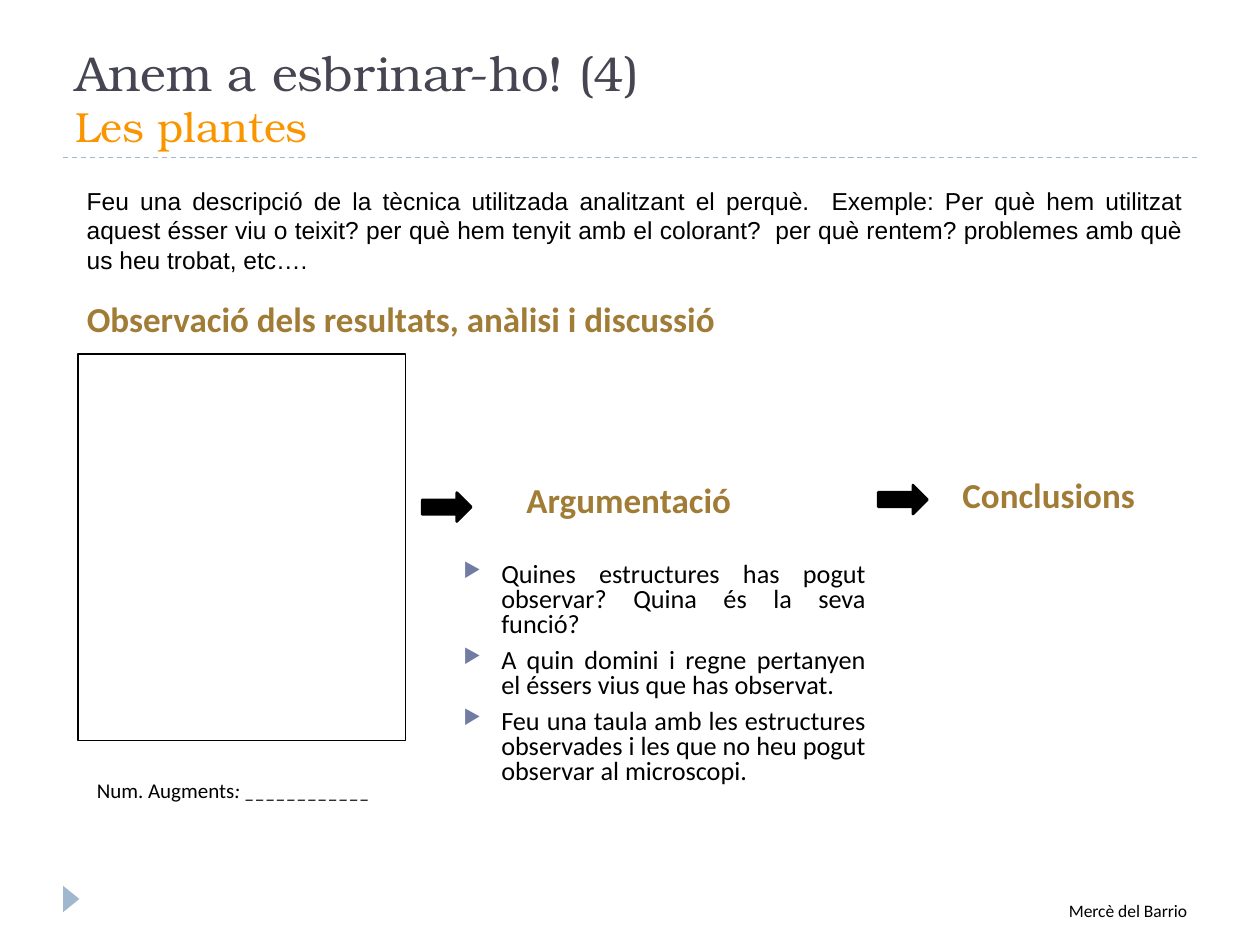
from lxml import etree
from pptx import Presentation
from pptx.dml.color import RGBColor
from pptx.enum.dml import MSO_LINE
from pptx.enum.shapes import MSO_CONNECTOR, MSO_SHAPE
from pptx.enum.text import MSO_ANCHOR, PP_ALIGN
from pptx.oxml.ns import qn
from pptx.util import Inches, Pt

COLORS = {
    "text": "000000",
    "title": "464653",
    "subtitle": "FA9500",
    "heading": "A17C36",
    "bullet": "727CA3",
    "accent": "9FB8CD",
}


def rgb(name):
    return RGBColor.from_string(COLORS[name])


class SlideBuilder:
    body_font = "Calibri"
    title_font = "TeX Gyre Bonum"

    def __init__(self, slide):
        self.slide = slide

    def style(self, run, size, color="text", font=None, bold=False, italic=False):
        run.font.name = font or self.body_font
        run.font.size = Pt(size)
        run.font.color.rgb = rgb(color)
        run.font.bold = bold
        run.font.italic = italic

    def text(self, box, content, size, color="text", font=None, bold=False,
             align=PP_ALIGN.LEFT, anchor=MSO_ANCHOR.TOP):
        frame = self.slide.shapes.add_textbox(*map(Inches, box)).text_frame
        frame.word_wrap = True
        frame.vertical_anchor = anchor
        frame.text = content
        for paragraph in frame.paragraphs:
            paragraph.alignment = align
            for run in paragraph.runs:
                self.style(run, size, color, font, bold)
        return frame

    def heading(self, box, content):
        self.text(box, content, 20, "heading", bold=True)

    def bullets(self, box, items, size):
        frame = self.text(box, "\n".join(items), size, align=PP_ALIGN.JUSTIFY)
        for paragraph in frame.paragraphs:
            paragraph.line_spacing = 0.8
            paragraph.space_before = Pt(6)
            properties = paragraph._p.get_or_add_pPr()
            properties.set("marL", str(Inches(0.3)))
            properties.set("indent", str(-Inches(0.3)))
            bullet_color = etree.SubElement(properties, qn("a:buClr"))
            etree.SubElement(bullet_color, qn("a:srgbClr"), val=COLORS["bullet"])
            etree.SubElement(properties, qn("a:buSzPct"), val="76000")
            etree.SubElement(properties, qn("a:buChar"), char="▶")

    def shape(self, kind, box, fill=None, line=None, width=0.75, rotation=0):
        shape = self.slide.shapes.add_shape(kind, *map(Inches, box))
        shape.shadow.inherit = False
        shape.rotation = rotation
        if fill:
            shape.fill.solid()
            shape.fill.fore_color.rgb = rgb(fill)
        else:
            shape.fill.background()
        if line:
            shape.line.color.rgb = rgb(line)
            shape.line.width = Pt(width)
        else:
            shape.line.fill.background()

    def dashed_line(self, start, end, color):
        line = self.slide.shapes.add_connector(
            MSO_CONNECTOR.STRAIGHT, *map(Inches, start + end))
        line.line.color.rgb = rgb(color)
        line.line.width = Pt(0.75)
        line.line.dash_style = MSO_LINE.DASH
        etree.SubElement(line._element.spPr, qn("a:effectLst"))


def main():
    presentation = Presentation()
    presentation.slide_width, presentation.slide_height = Inches(10), Inches(7.5)
    slide = presentation.slides.add_slide(presentation.slide_layouts[6])
    builder = SlideBuilder(slide)

    # Rule, corner marker and author
    builder.dashed_line((0.5, 1.25), (9.5, 1.25), "accent")
    builder.shape(MSO_SHAPE.ISOSCELES_TRIANGLE, (0.46, 7.07, 0.21, 0.13),
                  fill="accent", rotation=90)
    builder.text((7, 7.09, 2.52, 0.27), "Mercè del Barrio", 10, align=PP_ALIGN.RIGHT)

    # Title and subtitle
    title = builder.text((0.5, 0.17, 9, 1.08), "Anem a esbrinar-ho! (4) \vLes plantes",
                         28, "title", builder.title_font, anchor=MSO_ANCHOR.BOTTOM)
    subtitle = title.paragraphs[0].runs[1]
    builder.style(subtitle, 24, "subtitle", builder.title_font)

    # Task description
    builder.text(
        (0.59, 1.42, 8.9, 0.81),
        "Feu una descripció de la tècnica utilitzada analitzant el perquè.  "
        "Exemple: Per què hem utilitzat aquest ésser viu o teixit? per què hem "
        "tenyit amb el colorant?  per què rentem? problemes amb què us heu "
        "trobat, etc….",
        14, font="Arial", align=PP_ALIGN.JUSTIFY, anchor=MSO_ANCHOR.MIDDLE)

    # Observation: drawing frame and magnification
    builder.heading((0.59, 2.31, 7.01, 0.43),
                    "Observació dels resultats, anàlisi i discussió")
    builder.shape(MSO_SHAPE.RECTANGLE, (0.62, 2.81, 2.6, 3.07), line="text")
    augments = builder.text((0.67, 6.12, 2.66, 0.3), "Num. Augments", 12)
    blank = augments.paragraphs[0].add_run()
    blank.text = ": ____________"
    builder.style(blank, 12, italic=True)

    # Arrows from observation to argument to conclusions
    for left, top in ((3.35, 3.91), (6.97, 3.85)):
        builder.shape(MSO_SHAPE.RIGHT_ARROW, (left, top, 0.39, 0.23),
                      fill="text", line="text", width=1.5)

    # Argument and conclusions
    builder.heading((4.08, 3.75, 2.66, 0.43), "Argumentació")
    builder.bullets((3.58, 4.42, 3.39, 1.69), [
        "Quines estructures has pogut observar? Quina és la seva funció?",
        "A quin domini i regne pertanyen el éssers vius que has observat.",
        "Feu una taula amb les estructures observades i les que no heu pogut "
        "observar al microscopi.",
    ], 15)
    builder.heading((7.54, 3.71, 2.66, 0.43), "Conclusions")

    presentation.save("out.pptx")


if __name__ == "__main__":
    main()
